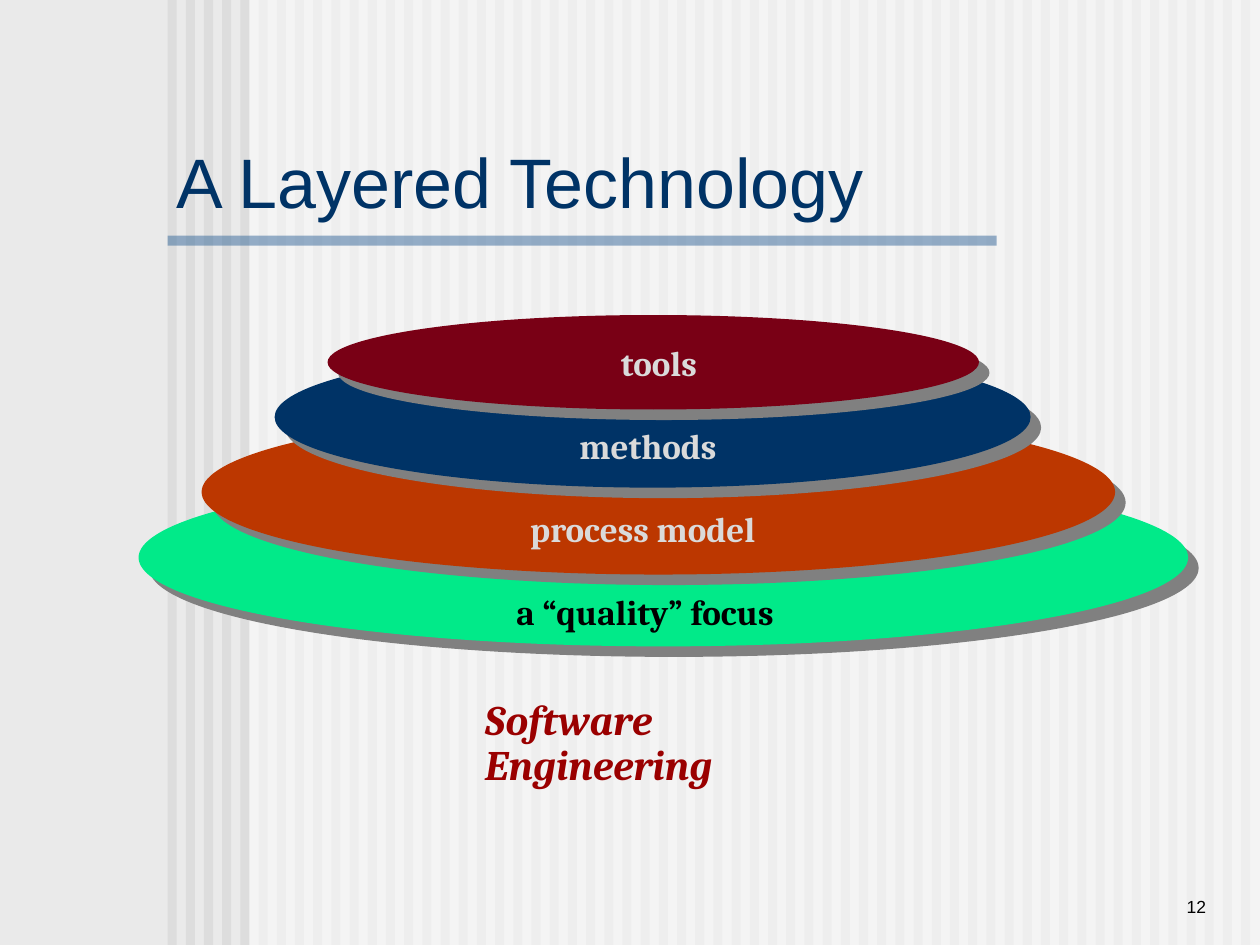
from dataclasses import dataclass

from lxml import etree
from pptx import Presentation, util as u
from pptx.dml import color
from pptx.enum import shapes, text
from pptx.oxml import ns


@dataclass(frozen=True)
class Theme:
    sans: str = "Arial"
    serif: str = "Cambria"
    paper: str = "EAEAEA"
    stripe: str = "DDDDDD"
    veil: str = "FFFFFF"
    rule: str = "336699"
    navy: str = "003366"
    maroon: str = "790015"
    orange: str = "BC3700"
    green: str = "01EA89"
    red: str = "9A0000"
    light: str = "DADADA"
    dark: str = "000000"
    shadow: str = "808080"
    title_size: int = 40
    caption_size: int = 24
    label_size: int = 20
    number_size: int = 10


THEME = Theme()


def rgb(value):
    return color.RGBColor.from_string(value)


def inches(box):
    return [u.Inches(length) for length in box]


def add_solid(slide, kind, box, fill, alpha=None):
    solid = slide.shapes.add_shape(kind, *inches(box))
    solid.shadow.inherit = False
    solid.fill.solid()
    solid.fill.fore_color.rgb = rgb(fill)
    solid.line.fill.background()
    if alpha is not None:
        tint = solid.fill._xPr.find(".//" + ns.qn("a:srgbClr"))
        etree.SubElement(tint, ns.qn("a:alpha"), val=str(alpha * 1000))
    return solid


def cast_shadow(solid):
    effects = solid._element.spPr.find(ns.qn("a:effectLst"))
    shadow = etree.SubElement(
        effects, ns.qn("a:outerShdw"), blurRad="0", dist=str(u.Pt(8.5)),
        dir=str(45 * 60000), algn="ctr", rotWithShape="0")
    etree.SubElement(shadow, ns.qn("a:srgbClr"), val=THEME.shadow)


def style(paragraph, face, size, ink, bold=False, italic=False):
    font = paragraph.font
    font.name, font.size = face, u.Pt(size)
    font.color.rgb = rgb(ink)
    font.bold, font.italic = bold, italic


def add_text(slide, box, words, face, size, ink, wrap=True, **emphasis):
    frame = slide.shapes.add_textbox(*inches(box)).text_frame
    frame.word_wrap = wrap
    frame.text = words
    style(frame.paragraphs[0], face, size, ink, **emphasis)
    return frame


def draw_backdrop(slide, box):
    left, top, width, height = box
    slide.background.fill.solid()
    slide.background.fill.fore_color.rgb = rgb(THEME.paper)
    rect = shapes.MSO_SHAPE.RECTANGLE
    first, count = 1.33, 60
    pitch = (9.85 - first) / (count - 1)
    for index in range(count):
        stripe = (left + first + index * pitch, top, pitch / 2, height)
        add_solid(slide, rect, stripe, THEME.stripe)
    veil_left = 1.98
    add_solid(slide, rect, (left + veil_left, top, width - veil_left, height),
              THEME.veil, 50)


def place_title(slide, box):
    left, top, width, height = box
    add_solid(slide, shapes.MSO_SHAPE.RECTANGLE,
              (left, top + height + 0.07, 6.58, 0.08), THEME.rule, 50)
    title = slide.shapes.title
    title.left, title.top, title.width, title.height = inches(box)
    frame = title.text_frame
    frame.text = "A Layered Technology"
    frame.margin_left = frame.margin_right = u.Inches(0.07)
    frame.margin_top = frame.margin_bottom = u.Inches(0.03)
    frame.vertical_anchor = text.MSO_ANCHOR.BOTTOM
    frame.auto_size = text.MSO_AUTO_SIZE.NONE
    heading = frame.paragraphs[0]
    heading.alignment = text.PP_ALIGN.LEFT
    style(heading, THEME.sans, THEME.title_size, THEME.navy)
    slide.shapes._spTree.append(title._element)


def draw_layers(slide, box):
    left, top, width, height = box
    layers = [
        ("a “quality” focus", THEME.green, THEME.dark,
         (0, 1.22, width, height - 1.22), (2.9, 2.34)),
        ("process model", THEME.orange, THEME.light,
         (0.5, 0.75, 7.25, 1.31), (3.01, 2.01)),
        ("methods", THEME.navy, THEME.light,
         (1.08, 0.25, 6, 1.12), (3.4, 1.29)),
        ("tools", THEME.maroon, THEME.light,
         (1.5, 0, 5.17, 0.75), (3.73, 0.82)),
    ]
    label_top, label_step, label_height = 2.14, 0.66, 0.43
    for level, (name, fill, ink, disc, label) in enumerate(layers):
        x, y, disc_width, disc_height = disc
        cast_shadow(add_solid(
            slide, shapes.MSO_SHAPE.OVAL,
            (left + x, top + y, disc_width, disc_height), fill))
        label_left, label_width = label
        add_text(slide, (left + label_left, top + label_top - level * label_step,
                         label_width, label_height),
                 name, THEME.serif, THEME.label_size, ink, wrap=False, bold=True)


def place_caption(slide, box):
    caption = add_text(slide, box, "Software Engineering", THEME.serif,
                       THEME.caption_size, THEME.red, bold=True, italic=True)
    caption.paragraphs[0].line_spacing = 0.9


def place_number(slide, box):
    number = add_text(slide, box, "12", THEME.sans, THEME.number_size, THEME.dark)
    number.vertical_anchor = text.MSO_ANCHOR.BOTTOM
    number.paragraphs[0].alignment = text.PP_ALIGN.RIGHT


def main():
    deck = Presentation()
    deck.slide_width, deck.slide_height = inches((10, 7.5))
    slide = deck.slides.add_slide(deck.slide_layouts.get_by_name("Title Only"))
    draw_backdrop(slide, (0, 0, 10, 7.5))
    place_number(slide, (8.25, 6.83, 1.42, 0.5))
    place_title(slide, (1.33, 1.08, 5.93, 0.72))
    place_caption(slide, (3.75, 5.5, 3.3, 0.46))
    draw_layers(slide, (1.1, 2.5, 8.33, 2.63))
    deck.save("out.pptx")


if __name__ == "__main__":
    main()
